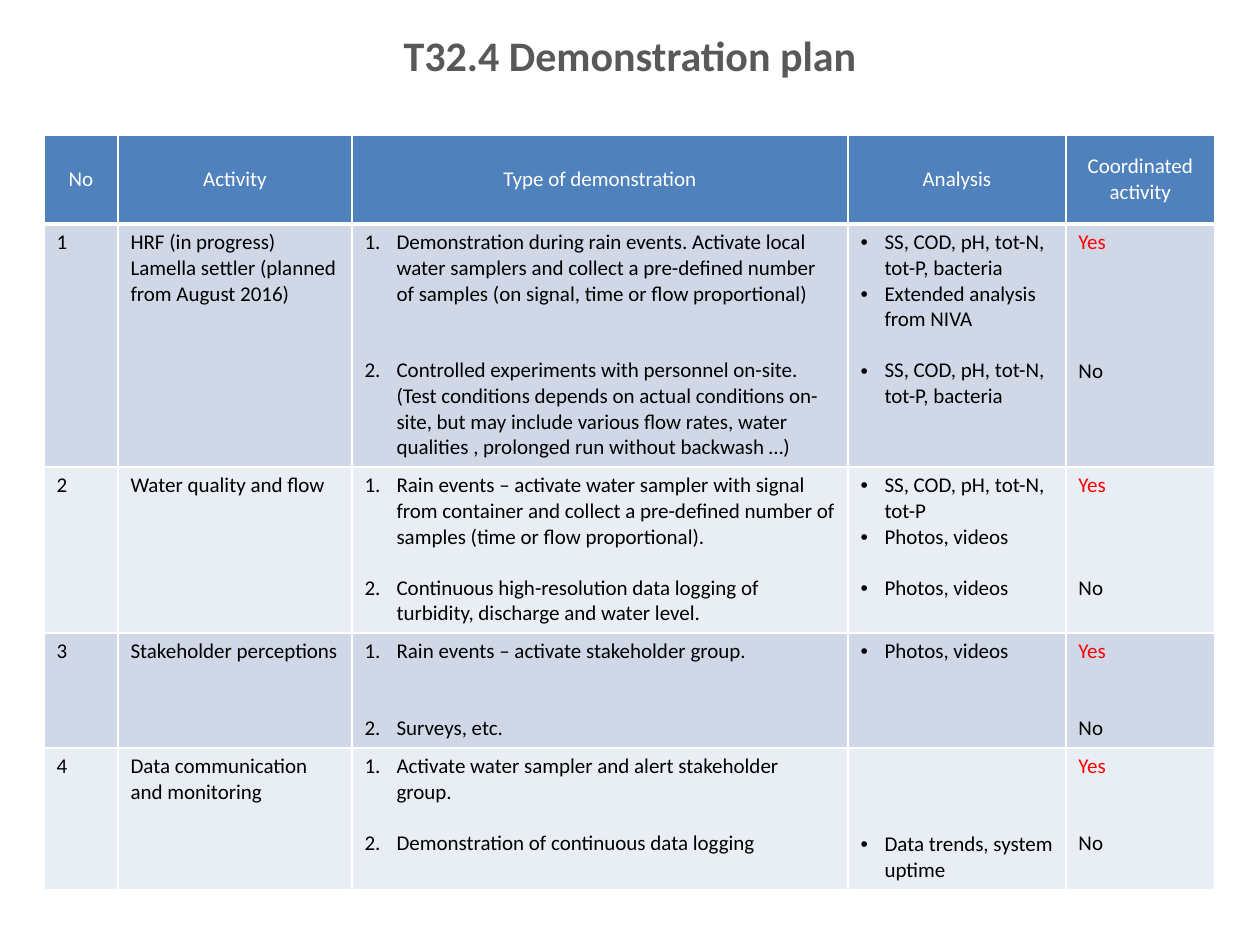
from dataclasses import dataclass

from lxml.etree import SubElement
from pptx import Presentation
from pptx.dml.color import RGBColor as Color
from pptx.enum.text import MSO_ANCHOR as Anchor, PP_ALIGN as Align
from pptx.oxml import parse_xml
from pptx.oxml.ns import nsdecls, qn
from pptx.util import Emu, Pt

SCALE = 914400 / 126


@dataclass(frozen=True)
class Theme:
    font: str = "Calibri"
    title_size: int = 24
    body_size: int = 12
    line_pitch: float = 14.65
    title: str = "595959"
    header: str = "4F81BD"
    bands: tuple = ("D0D8E8", "E9EDF4")
    white: str = "FFFFFF"
    text: str = "000000"
    accent: str = "FF0000"


@dataclass(frozen=True)
class Line:
    text: str
    gap: int = 0
    color: str = Theme.text


THEME = Theme()
COLUMNS = (74, 234, 496, 218, 149)
HEADER_HEIGHT = 89
ROW_HEIGHTS = (243, 166, 115, 140)
CELL_INSET = 6
LINE_HEIGHT = 26
LIST_STYLES = {
    2: (32, "buAutoNum", {"type": "arabicPeriod"}),
    3: (24, "buChar", {"char": "•"}),
}
HEADINGS = ("No", "Activity", "Type of demonstration", "Analysis", "Coordinated activity")


def coordinated(gap):
    """Return the yes and no answers, separated by a number of lines."""
    return [Line("Yes", color=THEME.accent), Line("No", gap)]


ACTIVITIES = (
    (
        [Line("HRF (in progress)"), Line("Lamella settler (planned from August 2016)")],
        [
            Line("Demonstration during rain events. Activate local water samplers and collect "
                 "a pre-defined number of samples (on signal, time or flow proportional)"),
            Line("Controlled experiments with personnel on-site. (Test conditions depends on "
                 "actual conditions on-site, but may include various flow rates, water "
                 "qualities , prolonged run without backwash …)", 2),
        ],
        [
            Line("SS, COD, pH, tot-N, tot-P, bacteria"),
            Line("Extended analysis from NIVA"),
            Line("SS, COD, pH, tot-N, tot-P, bacteria", 1),
        ],
        coordinated(4),
    ),
    (
        [Line("Water quality and flow")],
        [
            Line("Rain events – activate water sampler with signal from container and collect "
                 "a pre-defined number of samples (time or flow proportional)."),
            Line("Continuous high-resolution data logging of turbidity, discharge and "
                 "water level.", 1),
        ],
        [Line("SS, COD, pH, tot-N, tot-P"), Line("Photos, videos"), Line("Photos, videos", 1)],
        coordinated(3),
    ),
    (
        [Line("Stakeholder perceptions")],
        [Line("Rain events – activate stakeholder group."), Line("Surveys, etc.", 2)],
        [Line("Photos, videos")],
        coordinated(2),
    ),
    (
        [Line("Data communication and monitoring")],
        [
            Line("Activate water sampler and alert stakeholder group."),
            Line("Demonstration of continuous data logging", 1),
        ],
        [Line("Data trends, system uptime", 3)],
        coordinated(2),
    ),
)


def px(length):
    """Turn a length in px into EMU."""
    return Emu(round(length * SCALE))


def style_font(para, size, color, bold=False):
    """Set the font of a whole paragraph."""
    para.font.name = THEME.font
    para.font.size = Pt(size)
    para.font.bold = bold
    para.font.color.rgb = Color.from_string(color)


def add_bullet(para, indent, tag, attributes):
    """Give a paragraph a hanging indent and a bullet or number."""
    properties = para._p.get_or_add_pPr()
    properties.set("marL", str(px(indent)))
    properties.set("indent", str(-px(indent)))
    SubElement(properties, qn("a:buFont"), typeface="Arial" if tag == "buChar" else "+mj-lt")
    SubElement(properties, qn(f"a:{tag}"), attributes)


def paint_cell(cell, color, bottom=1):
    """Fill a cell and draw its white borders."""
    cell.fill.solid()
    cell.fill.fore_color.rgb = Color.from_string(color)
    properties = cell._tc.get_or_add_tcPr()
    for index, (side, width) in enumerate(zip("LRTB", (1, 1, 1, bottom))):
        border = parse_xml(
            f'<a:ln{side} {nsdecls("a")} w="{Pt(width)}"><a:solidFill>'
            f'<a:srgbClr val="{THEME.white}"/></a:solidFill></a:ln{side}>'
        )
        properties.insert(index, border)


def write_cell(cell, lines, list_style=None):
    """Write lines into a cell, turning their gaps into spacing."""
    frame = cell.text_frame
    cell.margin_top = px(CELL_INSET + lines[0].gap * LINE_HEIGHT)
    for index, line in enumerate(lines):
        para = frame.add_paragraph() if index else frame.paragraphs[0]
        para.text = line.text
        if index and line.gap:
            para.space_before = Pt(line.gap * THEME.line_pitch)
        if list_style:
            add_bullet(para, *list_style)
        style_font(para, THEME.body_size, line.color)


def add_title(page, text, left, top, width, height):
    """Place and format the title placeholder."""
    box = page.shapes.title
    box.left, box.top, box.width, box.height = map(px, (left, top, width, height))
    box.text_frame.text = text
    box.text_frame.vertical_anchor = Anchor.MIDDLE
    para = box.text_frame.paragraphs[0]
    para.alignment = Align.CENTER
    style_font(para, THEME.title_size, THEME.title, bold=True)


def add_plan(page, left, top):
    """Build the table of demonstration activities."""
    heights = (HEADER_HEIGHT, *ROW_HEIGHTS)
    box = map(px, (left, top, sum(COLUMNS), sum(heights)))
    table = page.shapes.add_table(len(heights), len(COLUMNS), *box).table
    table.horz_banding = False
    for column, width in zip(table.columns, COLUMNS):
        column.width = px(width)
    for row, height in zip(table.rows, heights):
        row.height = px(height)
    for cell, heading in zip(table.rows[0].cells, HEADINGS):
        paint_cell(cell, THEME.header, bottom=3)
        write_cell(cell, [Line(heading, color=THEME.white)])
        cell.vertical_anchor = Anchor.MIDDLE
        cell.text_frame.paragraphs[0].alignment = Align.CENTER
    for number, activity in enumerate(ACTIVITIES, 1):
        contents = ([Line(str(number))], *activity)
        for column, lines in enumerate(contents):
            cell = table.cell(number, column)
            paint_cell(cell, THEME.bands[(number - 1) % 2])
            write_cell(cell, lines, LIST_STYLES.get(column))


def main():
    """Build and save the deck."""
    deck = Presentation()
    deck.slide_width, deck.slide_height = px(1260), px(945)
    page = deck.slides.add_slide(deck.slide_layouts[5])
    add_title(page, "T32.4 Demonstration plan", 63, -24, 1134, 158)
    add_plan(page, 44, 135)
    deck.save("out.pptx")


if __name__ == "__main__":
    main()
